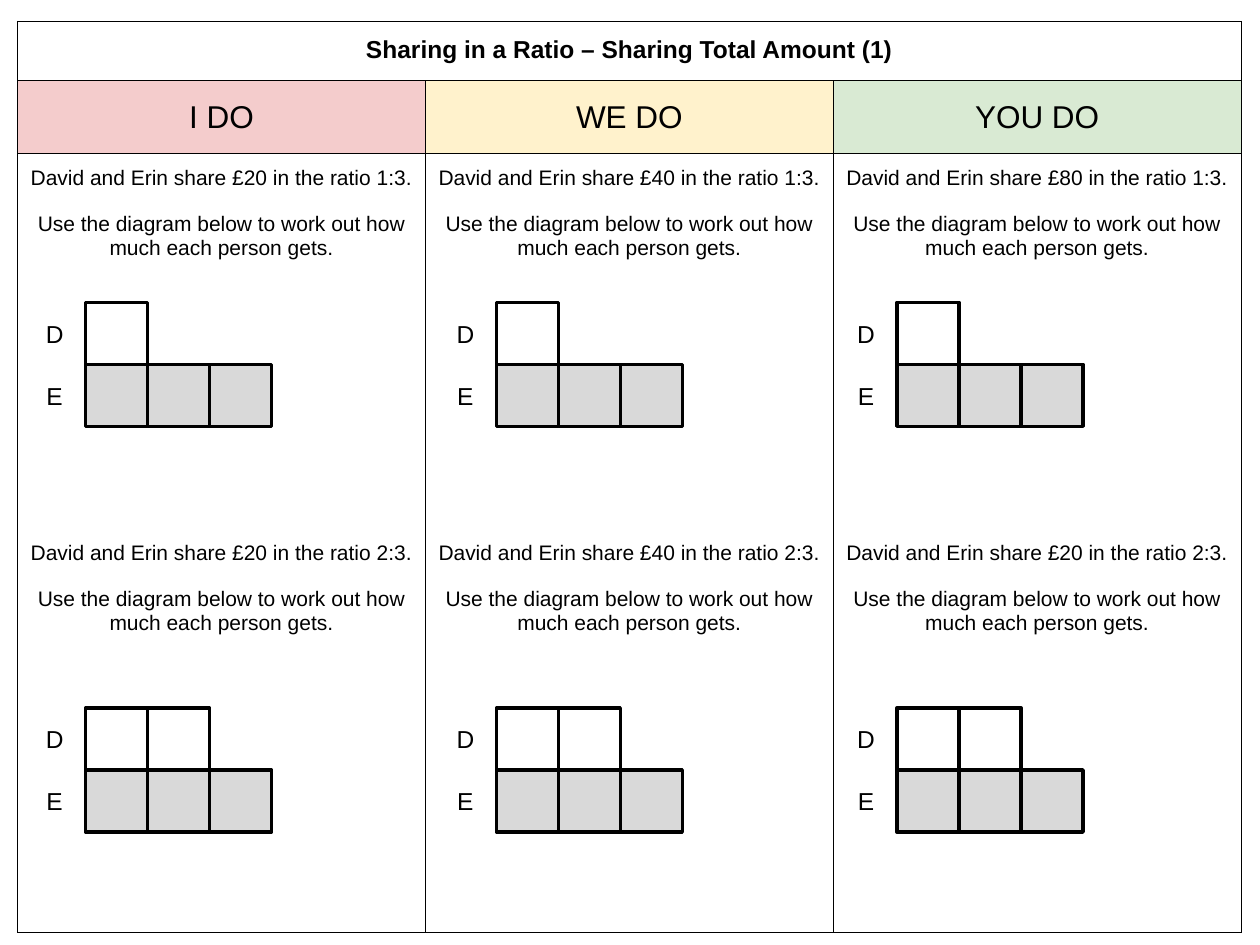
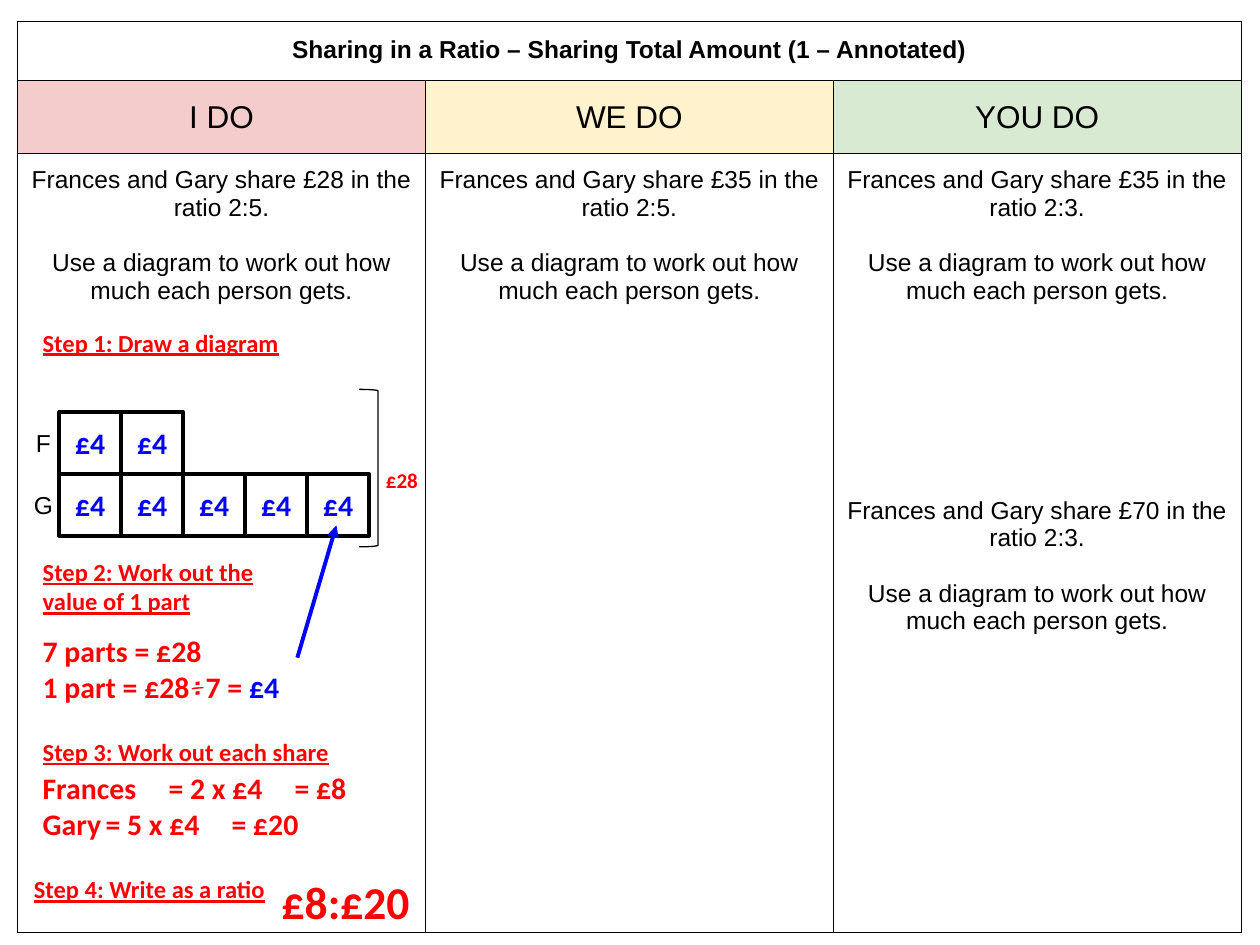
from dataclasses import dataclass

from lxml.etree import SubElement
from pptx import Presentation
from pptx.dml.color import RGBColor
from pptx.enum.shapes import MSO_CONNECTOR, MSO_SHAPE
from pptx.enum.text import MSO_ANCHOR, MSO_AUTO_SIZE, PP_ALIGN
from pptx.oxml import parse_xml
from pptx.oxml.ns import nsdecls, qn
from pptx.util import Inches, Pt


@dataclass(frozen=True)
class Theme:
    """Colours, fonts and type sizes of the lesson slides."""
    black: str = "000000"
    white: str = "FFFFFF"
    grey: str = "D9D9D9"
    red: str = "FF0000"
    blue: str = "0000FF"
    body: str = "Arial"
    notes: str = "Calibri"
    small: int = 12
    normal: int = 14
    sums: int = 17
    heading: int = 18
    answer: int = 26


T = Theme()
GRID_COLS, GRID_ROWS = 100, 75
TABLE_LEFT, TABLE_TOP = 1.4, 1.7
COLUMN, ROWS = 32.37, (4.7, 5.8, 61.8)
PART, INSET = 4.92, 1
LINE_HEIGHT = 1.12
STAGES = (("I DO", "F4CCCC"), ("WE DO", "FFF2CC"), ("YOU DO", "D9EAD3"))


def grid(*cells):
    """Turn counts of grid cells into lengths."""
    return [Inches(n * 10 / GRID_COLS) for n in cells]


def rgb(code):
    """Return the colour for a hex code."""
    return RGBColor.from_string(code)


def pad(holder, inset=INSET, anchor=MSO_ANCHOR.TOP):
    """Set the margins and anchor of a cell or text frame."""
    margin, = grid(inset)
    holder.margin_left = holder.margin_right = margin
    holder.margin_top = holder.margin_bottom = margin
    holder.vertical_anchor = anchor


def write(tf, lines, *, size=T.normal, font=T.body, color=T.black, bold=False,
          underline=False, align=PP_ALIGN.CENTER, gaps=()):
    """Write lines of (text, colour) runs or plain text, with gaps in line heights."""
    for i, line in enumerate(lines):
        p = tf.add_paragraph() if i else tf.paragraphs[0]
        p.alignment = align
        p.space_before = Pt(round(gaps[i] * size * LINE_HEIGHT) if gaps else 0)
        for text, run_color in [(line, color)] if isinstance(line, str) else line:
            r = p.add_run()
            r.text = text
            f = r.font
            f.size, f.name, f.bold, f.underline = Pt(size), font, bold, underline
            f.color.rgb = rgb(run_color)


def paint(shape, fill, width):
    """Give a shape its fill and black outline, without a shadow."""
    shape.shadow.inherit = False
    if fill:
        shape.fill.solid()
        shape.fill.fore_color.rgb = rgb(fill)
    else:
        shape.fill.background()
    shape.line.color.rgb = rgb(T.black)
    shape.line.width = Pt(width)


def add_text(s, at, lines, inset=INSET, anchor=MSO_ANCHOR.TOP, **fmt):
    """Add a wrapping text box."""
    tf = s.shapes.add_textbox(*grid(*at)).text_frame
    tf.word_wrap = True
    pad(tf, inset, anchor)
    write(tf, lines, **fmt)


def add_note(s, at, *lines, size=T.sums, color=T.red, align=PP_ALIGN.LEFT, **fmt):
    """Add a bold worked-solution note."""
    add_text(s, at, lines, size=size, font=T.notes, color=color, bold=True,
             align=align, **fmt)


def add_step(s, at, text):
    """Add an underlined step heading."""
    add_note(s, at, text, size=T.normal, underline=True)


def add_bar(s, left, top, label, parts, fill=None, value=None, label_width=PART):
    """Add a labelled row of equal parts, each with an optional value."""
    add_text(s, (left - label_width, top, label_width, PART), [label],
             inset=0, anchor=MSO_ANCHOR.MIDDLE)
    for i in range(parts):
        sp = s.shapes.add_shape(MSO_SHAPE.RECTANGLE,
                                *grid(left + i * PART, top, PART, PART))
        paint(sp, fill, 2)
        if value:
            pad(sp.text_frame, 0, MSO_ANCHOR.MIDDLE)
            write(sp.text_frame, [value], size=T.sums, font=T.notes,
                  color=T.blue, bold=True)


def add_arrow(s, start, end):
    """Add a blue arrow from start to end."""
    line = s.shapes.add_connector(MSO_CONNECTOR.STRAIGHT, *grid(*start, *end))
    line.line.color.rgb = rgb(T.blue)
    line.line.width = Pt(2.25)
    SubElement(line.line._get_or_add_ln(), qn("a:tailEnd"), type="triangle")
    SubElement(line._element.spPr, qn("a:effectLst"))


def set_borders(cell):
    """Draw thin black lines on all sides of a cell."""
    tcPr = cell._tc.get_or_add_tcPr()
    for i, side in enumerate("LRTB"):
        tcPr.insert(i, parse_xml(
            f'<a:ln{side} {nsdecls("a")} w="{Pt(0.75)}"><a:solidFill>'
            f'<a:srgbClr val="{T.black}"/></a:solidFill></a:ln{side}>'))


def add_title(s, text):
    """Place the slide title in the top band of the lesson table."""
    title = s.shapes.title
    title.left, title.top, title.width, title.height = grid(
        TABLE_LEFT, TABLE_TOP, COLUMN * len(STAGES), ROWS[0])
    tf = title.text_frame
    tf.word_wrap, tf.auto_size = True, MSO_AUTO_SIZE.NONE
    pad(tf)
    write(tf, [text], bold=True)


def add_lesson_table(s, questions, size):
    """Add the three-stage table, with (text, gap) question lines per stage."""
    table = s.shapes.add_table(
        len(ROWS), len(STAGES),
        *grid(TABLE_LEFT, TABLE_TOP, COLUMN * len(STAGES), sum(ROWS))).table
    table.first_row = table.horz_banding = False
    for row, height in zip(table.rows, grid(*ROWS)):
        row.height = height
    for column in table.columns:
        column.width, = grid(COLUMN)
    for cell in table.iter_cells():
        cell.fill.background()
        set_borders(cell)
        pad(cell, 0)
    table.cell(0, 0).merge(table.cell(0, len(STAGES) - 1))
    for i, ((stage, fill), lines) in enumerate(zip(STAGES, questions)):
        head, body = table.cell(1, i), table.cell(2, i)
        head.fill.solid()
        head.fill.fore_color.rgb = rgb(fill)
        pad(head, anchor=MSO_ANCHOR.MIDDLE)
        write(head.text_frame, [stage], size=T.heading)
        pad(body)
        texts, gaps = zip(*lines)
        write(body.text_frame, texts, size=size, gaps=gaps)


def add_lesson(prs, title, questions, size):
    """Add a slide with its title and lesson table."""
    s = prs.slides.add_slide(prs.slide_layouts[5])
    add_title(s, title)
    add_lesson_table(s, questions, size)
    return s


def ask(names, shares, diagram, gap):
    """Return question lines for (amount, ratio) shares, set apart by a gap."""
    lines = []
    for i, (amount, ratio) in enumerate(shares):
        lines += [(f"{names} share £{amount} in the ratio {ratio}.", gap if i else 0),
                  (f"Use {diagram} to work out how much each person gets.", 1)]
    return lines


def build_practice(prs):
    """Build the slide of questions with ready-made bars."""
    amounts = ((20, 20), (40, 40), (80, 20))
    questions = [ask("David and Erin", zip(pair, ("1:3", "2:3")),
                     "the diagram below", 12) for pair in amounts]
    s = add_lesson(prs, "Sharing in a Ratio – Sharing Total Amount (1)",
                   questions, T.small)
    for left in (6.8, 39.4, 71.2):
        for top, parts in ((24, 1), (56.2, 2)):
            add_bar(s, left, top, "D", parts, T.white)
            add_bar(s, left, top + PART, "E", 3, T.grey)


def build_worked_example(prs):
    """Build the slide with the annotated solution."""
    shares = ([(28, "2:5")], [(35, "2:5")], [(35, "2:3"), (70, "2:3")])
    questions = [ask("Frances and Gary", pairs, "a diagram", 7) for pairs in shares]
    s = add_lesson(prs, "Sharing in a Ratio – Sharing Total Amount (1 – Annotated)",
                   questions, T.normal)

    left, top, notes = 4.7, 32.7, 2.4
    add_step(s, (notes, 25, 30, 4.3), "Step 1: Draw a diagram")
    for i, (label, parts) in enumerate((("F", 2), ("G", 5))):
        add_bar(s, left, top + i * PART, label, parts, value="£4", label_width=2.5)
    bracket = s.shapes.add_shape(MSO_SHAPE.RIGHT_BRACKET, *grid(28.5, 30.9, 1.5, 12.5))
    bracket.adjustments[0] = 0.08
    paint(bracket, None, 0.75)
    add_note(s, (28.8, 36.1, 6.2, 5.5), "£28", size=T.small, align=PP_ALIGN.CENTER)

    add_step(s, (notes, 43.2, 22.9, 4.3), "Step 2: Work out the value of 1 part")
    add_note(s, (notes, 49.2, 30, 7.9), "7 parts = £28",
             [("1 part = £28፥7 = ", T.red), ("£4", T.blue)])
    add_arrow(s, (23.6, 52.2), (26.7, 41.7))

    add_step(s, (notes, 57.5, 31.9, 4.3), "Step 3: Work out each share")
    add_note(s, (notes, 60.1, 30, 7.9), "Frances\t= 2 x £4\t= £8", "Gary\t= 5 x £4\t= £20")

    add_step(s, (1.7, 68.4, 31.9, 4.3), "Step 4: Write as a ratio")
    add_note(s, (21, 68.4, 12.5, 5.6), "£8:£20", size=T.answer, align=PP_ALIGN.RIGHT)


def main():
    """Build and save the lesson."""
    prs = Presentation()
    prs.slide_width, prs.slide_height = grid(GRID_COLS, GRID_ROWS)
    build_practice(prs)
    build_worked_example(prs)
    prs.save("out.pptx")


if __name__ == "__main__":
    main()
